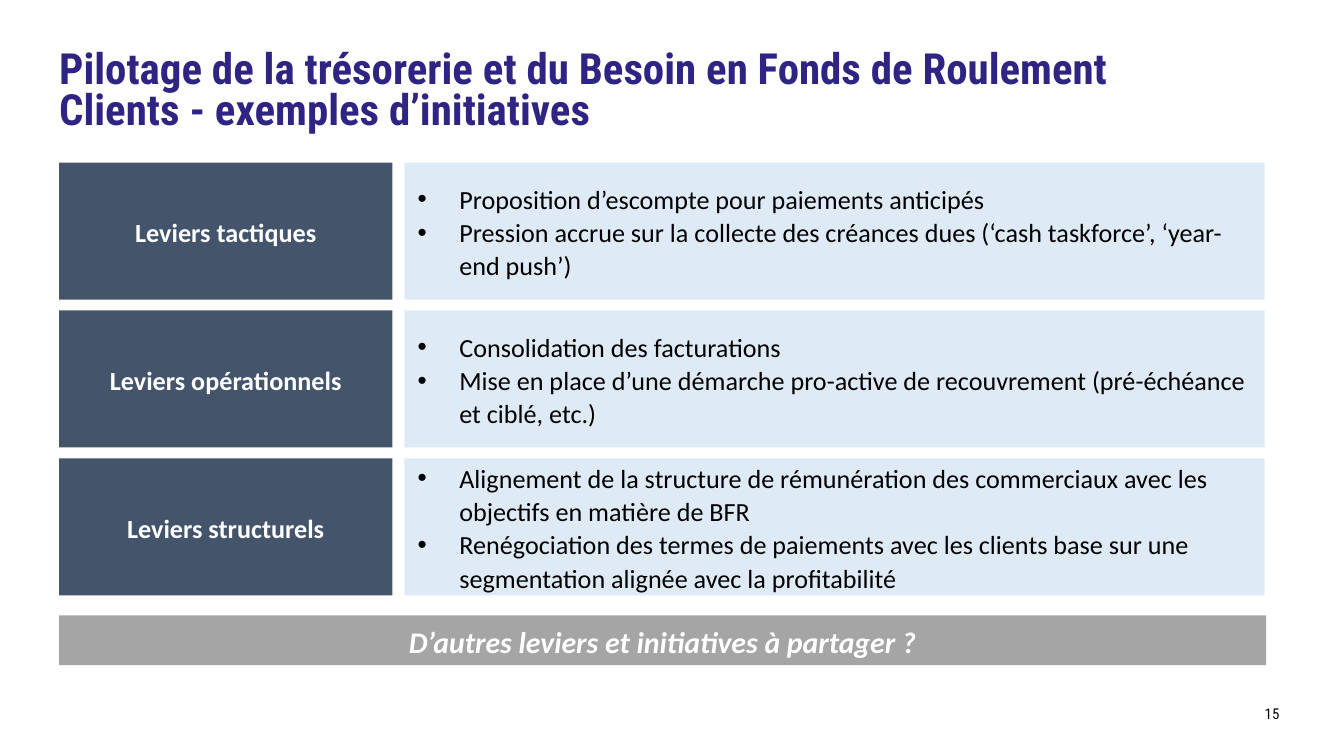
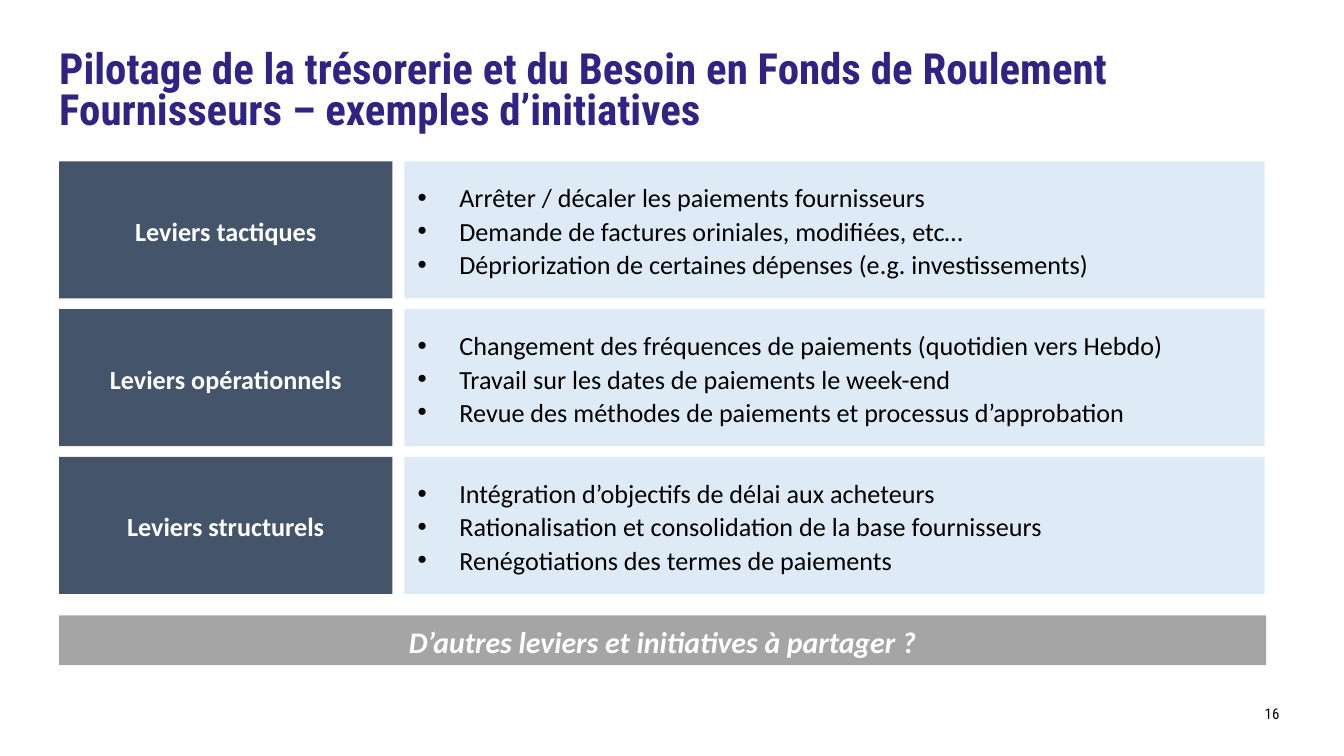
from dataclasses import dataclass
from lxml.etree import SubElement
from pptx import Presentation
from pptx.dml.color import RGBColor
from pptx.enum.shapes import MSO_SHAPE
from pptx.enum.text import MSO_ANCHOR, PP_ALIGN
from pptx.oxml.ns import qn
from pptx.util import Inches, Pt


@dataclass(frozen=True)
class Theme:
    title: str = "2F2483"
    label: str = "44546A"
    panel: str = "DEEBF7"
    band: str = "A5A5A5"
    light: str = "FFFFFF"
    dark: str = "000000"
    head: str = "Roboto Condensed"
    body: str = "Calibri"
    big: int = 23
    mid: int = 16
    base: int = 14
    small: int = 8
    lead: float = 1.06


THEME = Theme()
LABELS = ["Leviers tactiques", "Leviers opérationnels", "Leviers structurels"]
TOPIC = "Pilotage de la trésorerie et du Besoin en Fonds de Roulement"
PROMPT = "D’autres leviers et initiatives à partager ?"

SLIDES = [
    {
        "page": 15,
        "top": 1.21,
        "theme": "Clients - exemples d’initiatives",
        "points": [
            ["Proposition d’escompte pour paiements anticipés",
             "Pression accrue sur la collecte des créances dues (‘cash taskforce’, ‘year-end push’)"],
            ["Consolidation des facturations",
             "Mise en place d’une démarche pro-active de recouvrement (pré-échéance et ciblé, etc.)"],
            ["Alignement de la structure de rémunération des commerciaux avec les objectifs en matière de BFR",
             "Renégociation des termes de paiements avec les clients base sur une segmentation alignée avec la profitabilité"],
        ],
    },
    {
        "page": 16,
        "top": 1.2,
        "theme": "Fournisseurs – exemples d’initiatives",
        "points": [
            ["Arrêter / décaler les paiements fournisseurs",
             "Demande de factures oriniales, modifiées, etc…",
             "Dépriorization de certaines dépenses (e.g. investissements)"],
            ["Changement des fréquences de paiements (quotidien vers Hebdo)",
             "Travail sur les dates de paiements le week-end",
             "Revue des méthodes de paiements et processus d’approbation"],
            ["Intégration d’objectifs de délai aux acheteurs",
             "Rationalisation et consolidation de la base fournisseurs",
             "Renégotiations des termes de paiements"],
        ],
    },
]


def write(shape, lines, *, size=THEME.base, color=THEME.dark, font=THEME.body,
          bold=False, slant=False, align=PP_ALIGN.LEFT, lead=THEME.lead,
          anchor=MSO_ANCHOR.MIDDLE, inset=0.1, bullet=False):
    frame = shape.text_frame
    frame.word_wrap = True
    frame.vertical_anchor = anchor
    frame.margin_left = frame.margin_right = Inches(inset)
    frame.margin_top = frame.margin_bottom = Inches(inset)
    for i, line in enumerate(lines):
        para = frame.paragraphs[0] if i == 0 else frame.add_paragraph()
        para.alignment = align
        para.line_spacing = lead
        if bullet:
            props = para._p.get_or_add_pPr()
            props.set("marL", str(Inches(0.31)))
            props.set("indent", str(Inches(-0.31)))
            SubElement(props, qn("a:buFont"), typeface="Arial")
            SubElement(props, qn("a:buChar"), char="•")
        run = para.add_run()
        run.text = line
        style = run.font
        style.name, style.size = font, Pt(size)
        style.bold, style.italic = bold, slant
        style.color.rgb = RGBColor.from_string(color)


def add_text(slide, box, lines, **style):
    shape = slide.shapes.add_textbox(*map(Inches, box))
    write(shape, lines, anchor=MSO_ANCHOR.TOP, inset=0, font=THEME.head, **style)


def add_block(slide, box, fill, lines, **style):
    shape = slide.shapes.add_shape(MSO_SHAPE.RECTANGLE, *map(Inches, box))
    shape.shadow.inherit = False
    shape.fill.solid()
    shape.fill.fore_color.rgb = RGBColor.from_string(fill)
    shape.line.fill.background()
    write(shape, lines, **style)


def add_grid(slide, box, points):
    left, top, width, height = box
    label, gutter, gap = 2.48, 0.09, 0.08
    tall = (height - gap * (len(points) - 1)) / len(points)
    rows = [(name, items, top + i * (tall + gap))
            for i, (name, items) in enumerate(zip(LABELS, points))]
    for name, _, y in rows:
        add_block(slide, (left, y, label, tall), THEME.label, [name],
                  color=THEME.light, bold=True, align=PP_ALIGN.CENTER)
    for _, items, y in rows:
        add_block(slide, (left + label + gutter, y, width - label - gutter, tall),
                  THEME.panel, items, bullet=True)


def add_head(slide, box, theme):
    add_text(slide, box, [TOPIC, theme], size=THEME.big, color=THEME.title,
             bold=True, lead=Pt(22))


def add_page(slide, box, page):
    add_text(slide, box, [str(page)], size=THEME.small, lead=1.0)


def add_band(slide, box):
    add_block(slide, box, THEME.band, [PROMPT], size=THEME.mid,
              color=THEME.light, bold=True, slant=True, align=PP_ALIGN.CENTER)


def main():
    deck = Presentation()
    deck.slide_width = Inches(10)
    deck.slide_height = deck.slide_width * 9 // 16
    for data in SLIDES:
        slide = deck.slides.add_slide(deck.slide_layouts[6])
        add_head(slide, (0.44, 0.39, 8.62, 0.62), data["theme"])
        add_page(slide, (9.41, 5.24, 0.34, 0.13), data["page"])
        add_grid(slide, (0.44, data["top"], 8.97, 3.22), data["points"])
        add_band(slide, (0.44, 4.58, 8.98, 0.37))
    deck.save("out.pptx")


if __name__ == "__main__":
    main()
